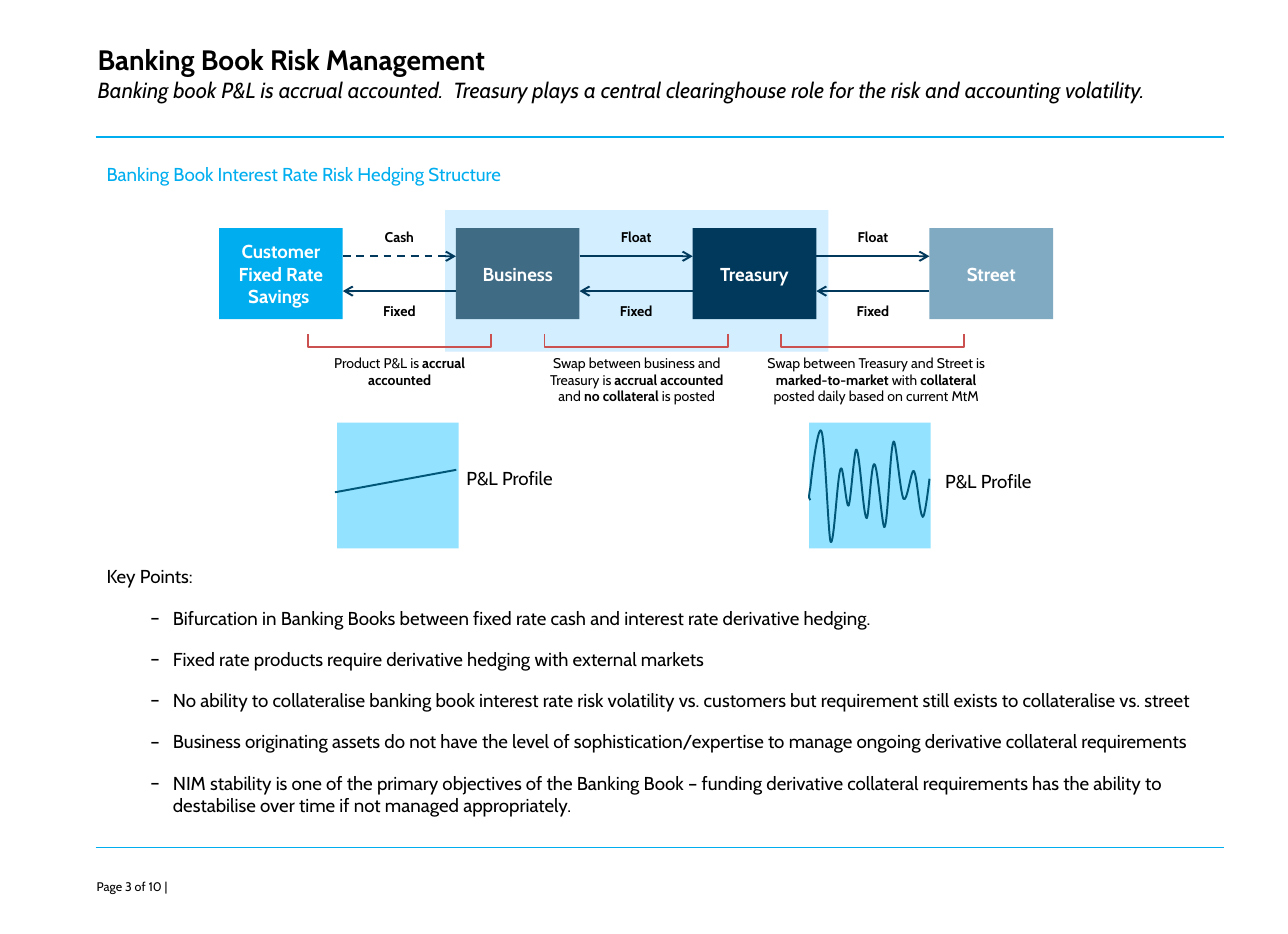
from lxml import etree
from pptx import Presentation
from pptx.dml.color import RGBColor
from pptx.enum.dml import MSO_LINE
from pptx.enum.shapes import MSO_CONNECTOR, MSO_SHAPE
from pptx.enum.text import MSO_ANCHOR, PP_ALIGN
from pptx.oxml.ns import qn
from pptx.util import Inches, Pt

FONT = "Cabin"
COLORS = {
    "black": "000000", "white": "FFFFFF", "cyan": "00AEEF", "slate": "406B85",
    "navy": "00395C", "mist": "80A9C2", "band": "96D7FF", "panel": "93E2FF",
    "bracket": "CB5151", "curve": "005778",
}

# Flow diagram layout
BOX_W, BOX_H, BOX_TOP = 1.1, 0.81, 2.03
FIRST_BOX, LAST_BOX = 1.95, 8.27
PITCH = (LAST_BOX - FIRST_BOX) / 3
GAP = PITCH - BOX_W

BOXES = [("Customer Fixed Rate Savings ", "cyan"), ("Business", "slate"),
         ("Treasury", "navy"), ("Street", "mist")]
FLOWS = [("Cash", True), ("Float", False), ("Float", False)]

# Left, width and (text, bold) runs
CAPTIONS = [
    (2.74, 1.63, [("Product P&L is ", False), ("accrual accounted", True)]),
    (4.85, 1.63, [("Swap between business and Treasury is ", False),
                  ("accrual accounted ", True), ("and ", False),
                  ("no collateral", True), (" is posted", False)]),
    (6.75, 2.09, [("Swap between Treasury and Street is ", False),
                  ("marked-to-market ", True), ("with ", False),
                  ("collateral ", True),
                  ("posted daily based on current MtM", False)]),
]

KEY_POINTS = [
    "Bifurcation in Banking Books between fixed rate cash and interest rate derivative hedging.",
    "Fixed rate products require derivative hedging with external markets",
    "No ability to collateralise banking book interest rate risk volatility vs. customers "
    "but requirement still exists to collateralise vs. street",
    "Business originating assets do not have the level of sophistication/expertise "
    "to manage ongoing derivative collateral requirements",
    "NIM stability is one of the primary objectives of the Banking Book – funding derivative "
    "collateral requirements has the ability to destabilise over time if not managed appropriately.",
]

# Volatile profile: start point, then two control points and an end per wave
WAVE_START = (7.21, 4.45)
WAVES = [
    (7.2, 4.44, 7.19, 4.44, 7.21, 4.34), (7.22, 4.23, 7.28, 3.75, 7.31, 3.84),
    (7.34, 3.92, 7.37, 4.77, 7.39, 4.82), (7.42, 4.88, 7.45, 4.22, 7.48, 4.17),
    (7.5, 4.11, 7.53, 4.53, 7.55, 4.5), (7.57, 4.47, 7.6, 3.98, 7.62, 4),
    (7.65, 4.02, 7.68, 4.59, 7.71, 4.61), (7.73, 4.63, 7.75, 4.11, 7.78, 4.13),
    (7.81, 4.14, 7.85, 4.72, 7.87, 4.69), (7.9, 4.66, 7.92, 3.97, 7.95, 3.93),
    (7.97, 3.89, 8.01, 4.4, 8.04, 4.44), (8.07, 4.48, 8.11, 4.16, 8.13, 4.19),
    (8.16, 4.22, 8.18, 4.58, 8.21, 4.6), (8.23, 4.61, 8.27, 4.26, 8.27, 4.26),
]


def rgb(name):
    return RGBColor.from_string(COLORS[name])


def add_run(p, text, size, color="black", bold=False, italic=False):
    r = p.add_run()
    r.text = text
    r.font.name, r.font.size = FONT, Pt(size)
    r.font.bold, r.font.italic = bold, italic
    r.font.color.rgb = rgb(color)


def set_insets(tf, x, y):
    tf.margin_left = tf.margin_right = Inches(x)
    tf.margin_top = tf.margin_bottom = Inches(y)


def add_box(s, x, y, w, h, inset=(0, 0), wrap=True, align=PP_ALIGN.LEFT):
    tf = s.shapes.add_textbox(Inches(x), Inches(y), Inches(w), Inches(h)).text_frame
    tf.word_wrap = wrap
    set_insets(tf, *inset)
    tf.paragraphs[0].alignment = align
    return tf


def add_label(s, x, y, w, text):
    tf = add_box(s, x, y, w, 0.15, align=PP_ALIGN.CENTER)
    add_run(tf.paragraphs[0], text, 9, bold=True)


def add_rect(s, x, y, w, h, color, alpha=None):
    sp = s.shapes.add_shape(MSO_SHAPE.RECTANGLE, Inches(x), Inches(y), Inches(w), Inches(h))
    sp.shadow.inherit = False
    sp.fill.solid()
    sp.fill.fore_color.rgb = rgb(color)
    sp.line.fill.background()
    if alpha:
        clr = sp._element.spPr.find(".//" + qn("a:srgbClr"))
        etree.SubElement(clr, qn("a:alpha")).set("val", str(alpha * 1000))
    return sp


def add_line(s, x1, y1, x2, y2, color, width=1.25, dashed=False, arrow=False):
    cn = s.shapes.add_connector(MSO_CONNECTOR.STRAIGHT, Inches(x1), Inches(y1),
                                Inches(x2), Inches(y2))
    cn.line.color.rgb = rgb(color)
    cn.line.width = Pt(width)
    if dashed:
        cn.line.dash_style = MSO_LINE.DASH
    if arrow:
        etree.SubElement(cn.line._get_or_add_ln(), qn("a:tailEnd")).set("type", "arrow")
    etree.SubElement(cn._element.spPr, qn("a:effectLst"))


def style_outline(sp, color):
    sp.shadow.inherit = False
    sp.fill.background()
    sp.line.color.rgb = rgb(color)
    sp.line.width = Pt(1.25)


def add_bracket(s, center_x, center_y, span, depth):
    sp = s.shapes.add_shape(MSO_SHAPE.LEFT_BRACKET, Inches(center_x - depth / 2),
                            Inches(center_y - span / 2), Inches(depth), Inches(span))
    sp.rotation = 270
    sp.adjustments[0] = 0
    style_outline(sp, "bracket")


def add_curve(s, start, segments, color):
    points = [(Inches(seg[i]), Inches(seg[i + 1])) for seg in segments for i in (0, 2, 4)]
    fb = s.shapes.build_freeform(Inches(start[0]), Inches(start[1]))
    fb.add_line_segments(points, close=False)
    sp = fb.convert_to_shape()
    # Join every three straight steps into one Bézier step
    steps = list(sp._element.iter(qn("a:lnTo")))
    outline = steps[0].getparent()
    for i in range(0, len(steps), 3):
        bezier = etree.SubElement(outline, qn("a:cubicBezTo"))
        for step in steps[i:i + 3]:
            bezier.append(step[0])
            outline.remove(step)
    style_outline(sp, color)


def add_key_points(s):
    tf = add_box(s, 0.85, 4.98, 10.16, 2.4, (0.1, 0.05))
    p = tf.paragraphs[0]
    p.space_after = Pt(6)
    add_run(p, "Key Points:", 12)
    for point in KEY_POINTS:
        p = tf.add_paragraph()
        p.space_before = p.space_after = Pt(6)
        pPr = p._p.get_or_add_pPr()
        pPr.set("marL", str(Inches(0.59)))
        pPr.set("indent", str(Inches(-0.2)))
        etree.SubElement(pPr, qn("a:buFont")).set("typeface", FONT)
        etree.SubElement(pPr, qn("a:buChar")).set("char", "–")
        add_run(p, point, 12)


def add_flow_diagram(s):
    add_rect(s, 3.96, 1.87, 3.41, 1.26, "band", alpha=42)
    # Parties
    for i, (name, color) in enumerate(BOXES):
        sp = add_rect(s, FIRST_BOX + i * PITCH, BOX_TOP, BOX_W, BOX_H, color)
        tf = sp.text_frame
        tf.word_wrap = True
        tf.vertical_anchor = MSO_ANCHOR.MIDDLE
        set_insets(tf, 0.08, 0.08)
        tf.paragraphs[0].alignment = PP_ALIGN.CENTER
        add_run(tf.paragraphs[0], name, 12, "white", bold=True)
    # Flows between neighbours, with brackets and captions
    for i, ((flow, dashed), (x, w, runs)) in enumerate(zip(FLOWS, CAPTIONS)):
        left = FIRST_BOX + i * PITCH + BOX_W
        right = left + GAP
        add_line(s, left, 2.28, right, 2.28, "navy", dashed=dashed, arrow=True)
        add_line(s, right, 2.59, left, 2.59, "navy", arrow=True)
        add_label(s, left, 2.03, GAP, flow)
        add_label(s, left, 2.69, GAP, "Fixed")
        add_bracket(s, left + GAP / 2, 3.03, 1.63, 0.12)
        tf = add_box(s, x, 3.15, w, 0.45, align=PP_ALIGN.CENTER)
        for text, bold in runs:
            add_run(tf.paragraphs[0], text, 9, bold=bold)


def add_profiles(s):
    for panel_x, label_x, label_y in [(3, 4.15, 4.15), (7.2, 8.41, 4.18)]:
        add_rect(s, panel_x, 3.76, 1.08, 1.12, "panel")
        tf = add_box(s, label_x, label_y, 0.79, 0.2, wrap=False)
        add_run(tf.paragraphs[0], "P&L Profile", 12)
    add_line(s, 2.98, 4.38, 4.06, 4.18, "curve")
    add_curve(s, WAVE_START, WAVES, "curve")


def main():
    prs = Presentation()
    prs.slide_width, prs.slide_height = Inches(11.46), Inches(8.31)
    s = prs.slides.add_slide(prs.slide_layouts[6])

    # Rules and footer
    for y in (1.22, 7.54):
        add_line(s, 0.85, y, 10.89, y, "cyan", 1)
    tf = add_box(s, 0.77, 7.78, 6.06, 0.29, (0.09, 0.04))
    add_run(tf.paragraphs[0], "Page 3 of 10 |", 8)

    # Title and heading
    tf = add_box(s, 0.77, 0.33, 10.31, 0.64, (0.1, 0.05))
    p = tf.paragraphs[0]
    add_run(p, "Banking Book Risk Management", 18, bold=True)
    p.add_line_break()
    add_run(p, "Banking book P&L is accrual accounted.  Treasury plays a central "
            "clearinghouse role for the risk and accounting volatility.", 14, italic=True)
    tf = add_box(s, 0.85, 1.4, 10.16, 0.3, (0.1, 0.05))
    add_run(tf.paragraphs[0], "Banking Book Interest Rate Risk Hedging Structure", 12, "cyan")

    add_flow_diagram(s)
    add_profiles(s)
    add_key_points(s)
    prs.save("out.pptx")


if __name__ == "__main__":
    main()
